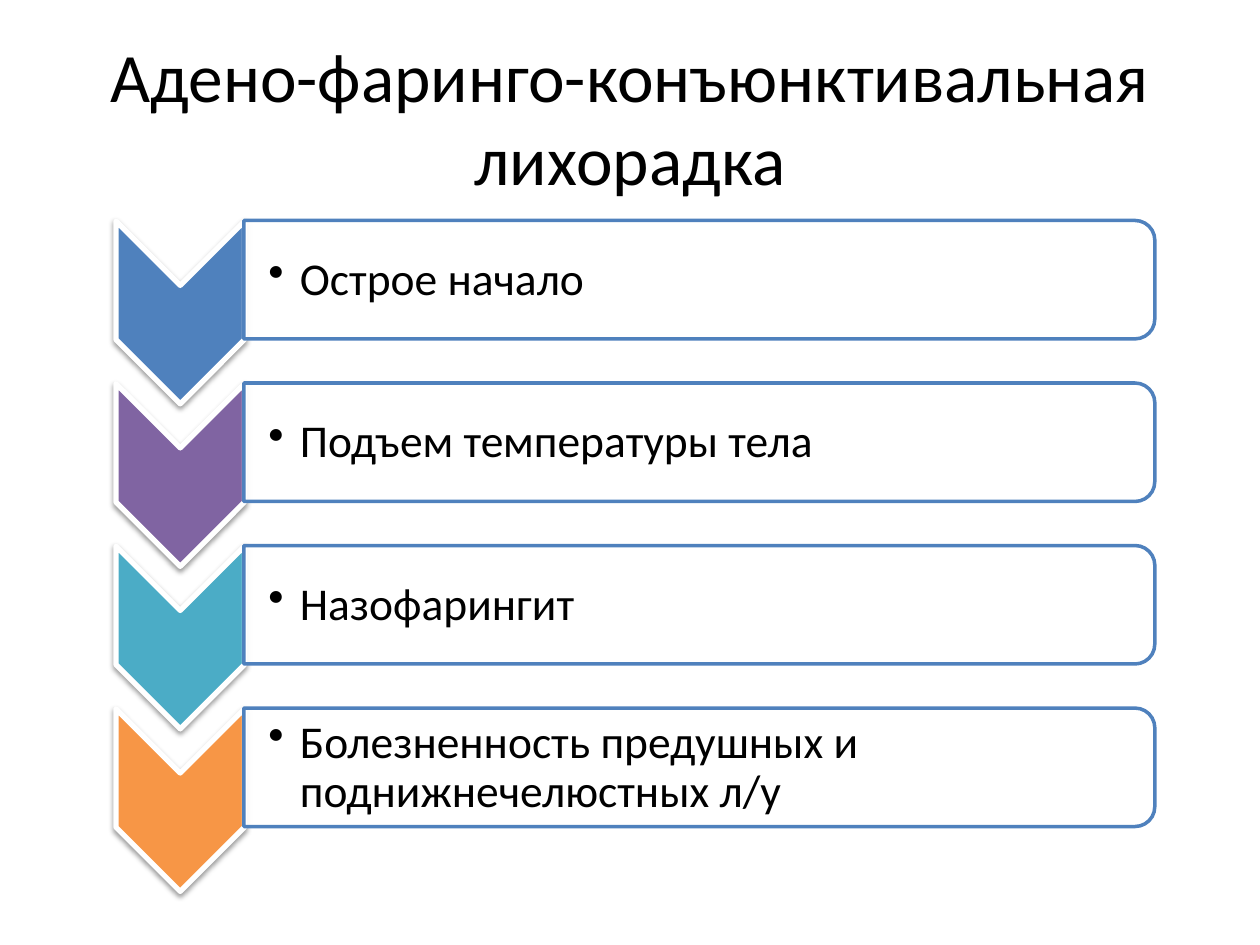
from dataclasses import dataclass

from lxml import etree
from pptx import Presentation
from pptx import util as u
from pptx.dml.color import RGBColor
from pptx.enum import shapes, text
from pptx.oxml import ns


@dataclass
class Theme:
    font: str = "Calibri"
    title_size: float = 39.6
    item_size: float = 26
    ink: str = "000000"
    paper: str = "FFFFFF"
    outline: str = "4F81BD"


theme = Theme()
symptoms = [
    ("Острое начало", "4F81BD"),
    ("Подъем температуры тела", "8064A2"),
    ("Назофарингит", "4BACC6"),
    ("Болезненность предушных и поднижнечелюстных л/у", "F79646"),
]


def add_xml(parent, tag, **attributes):
    return etree.SubElement(parent, ns.qn(tag), attributes)


def add_run(para, words, size):
    span = para.add_run()
    span.text = words
    span.font.name = theme.font
    span.font.size = u.Pt(size)
    span.font.color.rgb = RGBColor.from_string(theme.ink)


deck = Presentation()
deck.slide_width, deck.slide_height = u.Inches(10), u.Inches(7.5)
page = deck.slides.add_slide(deck.slide_layouts[5])

# Title
title = page.shapes.title
title.left, title.top = u.Inches(0.5), u.Inches(0.3)
title.width, title.height = u.Inches(9), u.Inches(1.25)
title.text_frame.vertical_anchor = text.MSO_ANCHOR.MIDDLE
para = title.text_frame.paragraphs[0]
para.alignment = text.PP_ALIGN.CENTER
add_run(para, "Адено-фаринго-конъюнктивальная лихорадка", theme.title_size)

# Chevron list: every row is one step below the previous one
first_top, step = 1.75, 1.29
for index, (symptom, color) in enumerate(symptoms):
    top = first_top + index * step

    # Chevron and panel are turned a quarter, so they share a row by centre
    parts = []
    for kind, center_x, center_y, width, height, fill, line, weight in (
        (shapes.MSO_SHAPE.CHEVRON, 1.43, top + 0.73, 1.45, 1.02, color, theme.paper, 3),
        (shapes.MSO_SHAPE.ROUND_2_SAME_RECTANGLE, 5.55, top + 0.47, 0.94, 7.23,
         theme.paper, theme.outline, 2),
    ):
        shape = page.shapes.add_shape(
            kind, u.Inches(center_x - width / 2), u.Inches(center_y - height / 2),
            u.Inches(width), u.Inches(height))
        shape.rotation = 90
        shape.shadow.inherit = False
        shape.fill.solid()
        shape.fill.fore_color.rgb = RGBColor.from_string(fill)
        shape.line.color.rgb = RGBColor.from_string(line)
        shape.line.width = u.Pt(weight)
        parts.append(shape)
    chevron, panel = parts
    chevron.adjustments[0] = 0.5
    panel.adjustments[0] = 0.167
    panel.adjustments[1] = 0

    # Soft shadow below the chevron, slight transparency of the panel
    effects = chevron._element.spPr.find(ns.qn("a:effectLst"))
    shadow = add_xml(effects, "a:outerShdw", blurRad=str(u.Pt(3.1)),
                     dist=str(u.Pt(1.6)), dir="5400000", rotWithShape="0")
    shade = add_xml(shadow, "a:srgbClr", val=theme.ink)
    add_xml(shade, "a:alpha", val="38000")
    panel_color = panel._element.spPr.find(ns.qn("a:solidFill"))[0]
    add_xml(panel_color, "a:alpha", val="90000")

    # Bulleted text
    box = page.shapes.add_textbox(
        u.Inches(1.93), u.Inches(top + 0.05), u.Inches(7.19), u.Inches(0.85))
    frame = box.text_frame
    frame.word_wrap = True
    frame.vertical_anchor = text.MSO_ANCHOR.MIDDLE
    frame.margin_left = u.Inches(0.2)
    frame.margin_top = frame.margin_right = frame.margin_bottom = u.Inches(0.02)
    para = frame.paragraphs[0]
    para.level = 1
    para.line_spacing = 0.9
    settings = para._p.get_or_add_pPr()
    settings.set("marL", str(u.Inches(0.25)))
    settings.set("indent", str(u.Inches(-0.25)))
    add_xml(add_xml(settings, "a:buClr"), "a:srgbClr", val=theme.ink)
    add_xml(settings, "a:buChar", char="•")
    add_run(para, symptom, theme.item_size)

deck.save("out.pptx")
